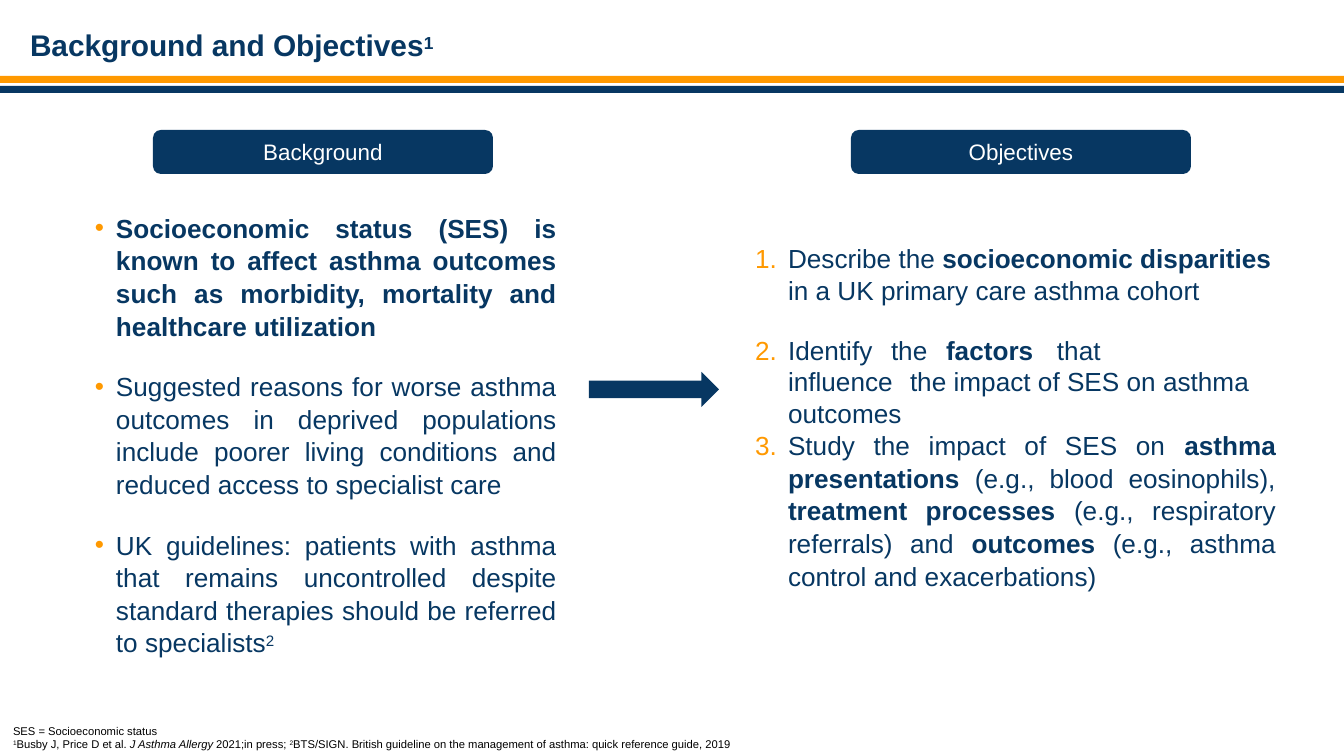
from dataclasses import dataclass

from lxml import etree
from pptx import Presentation
from pptx import util as u
from pptx.dml.color import RGBColor
from pptx.enum import shapes, text
from pptx.oxml import ns

PX = 914400 / 134.4


@dataclass(frozen=True)
class Theme:
    font: str = "Arial"
    navy: RGBColor = RGBColor(0x07, 0x37, 0x62)
    orange: RGBColor = RGBColor(0xFF, 0x99, 0x00)
    white: RGBColor = RGBColor(0xFF, 0xFF, 0xFF)
    black: RGBColor = RGBColor(0, 0, 0)
    title: int = 16
    body: int = 14
    label: int = 12
    footnote: int = 6


theme = Theme()


def place(shape, left, top, width, height, anchor):
    shape.left, shape.top, shape.width, shape.height = (
        round(value * PX) for value in (left, top, width, height))
    frame = shape.text_frame
    frame.margin_left = frame.margin_top = frame.margin_right = frame.margin_bottom = 0
    frame.word_wrap = True
    frame.auto_size = text.MSO_AUTO_SIZE.NONE
    frame.vertical_anchor = anchor
    return frame


def write(paragraph, spans, size, color, bold=False):
    for words, style in spans:
        if style == "break":
            paragraph.add_line_break()
            continue
        run = paragraph.add_run()
        run.text = words
        run.font.name = theme.font
        run.font.size = u.Pt(size)
        run.font.color.rgb = color
        run.font.bold = bold or style == "bold"
        run.font.italic = style == "italic"
        if style == "super":
            run.font._element.set("baseline", "26000")


presentation = Presentation()
presentation.slide_width = round(1344 * PX)
presentation.slide_height = round(756 * PX)
slide = presentation.slides.add_slide(presentation.slide_layouts[3])
for placeholder in list(slide.placeholders):
    if placeholder.placeholder_format.idx > 2:
        placeholder._element.getparent().remove(placeholder._element)

frame = place(slide.shapes.title, 30, 22, 1050, 46, text.MSO_ANCHOR.MIDDLE)
frame.paragraphs[0].alignment = text.PP_ALIGN.LEFT
write(frame.paragraphs[0], [("Background and Objectives", ""), ("1", "super")],
      theme.title, theme.navy, bold=True)

PRESET = shapes.MSO_SHAPE
blocks = [
    (PRESET.RECTANGLE, 0, 76, 1344, 7, theme.orange, ""),
    (PRESET.RECTANGLE, 0, 86, 1344, 7, theme.navy, ""),
    (PRESET.ROUNDED_RECTANGLE, 153, 130, 340, 44, theme.navy, "Background"),
    (PRESET.ROUNDED_RECTANGLE, 851, 130, 340, 44, theme.navy, "Objectives"),
    (PRESET.RIGHT_ARROW, 589, 372, 130, 35, theme.navy, ""),
]
for preset, left, top, width, height, color, label in blocks:
    shape = slide.shapes.add_shape(preset, 0, 0, 0, 0)
    frame = place(shape, left, top, width, height, text.MSO_ANCHOR.MIDDLE)
    shape.shadow.inherit = False
    shape.fill.solid()
    shape.fill.fore_color.rgb = color
    shape.line.fill.background()
    if preset == PRESET.ROUNDED_RECTANGLE:
        shape.adjustments[0] = 0.18
    if label:
        frame.paragraphs[0].alignment = text.PP_ALIGN.CENTER
        write(frame.paragraphs[0], [(label, "")], theme.label, theme.white)

LEFT, JUSTIFY = text.PP_ALIGN.LEFT, text.PP_ALIGN.JUSTIFY
background = [
    (JUSTIFY, 1.04, [], [
        ("Socioeconomic status (SES) is known to affect asthma outcomes such as "
         "morbidity, mortality and healthcare utilization", "bold")]),
    (JUSTIFY, 1.04, [], [
        ("Suggested reasons for worse asthma outcomes in deprived populations include "
         "poorer living conditions and reduced access to specialist care", "")]),
    (JUSTIFY, 1.04, [], [
        ("UK guidelines: patients with asthma that remains uncontrolled despite "
         "standard therapies should be referred to specialists", ""), ("2", "super")]),
]
objectives = [
    (LEFT, 1.04, [], [
        ("Describe the ", ""), ("socioeconomic disparities", "bold"),
        (" in a UK primary care asthma cohort", "")]),
    (LEFT, 1, [136, 155, 191, 302], [
        ("Identify\tthe\t", ""), ("factors", "bold"), ("\tthat", ""), ("", "break"),
        ("influence\tthe impact of SES on asthma outcomes", "")]),
    (JUSTIFY, 1.04, [], [
        ("Study the impact of SES on ", ""), ("asthma presentations", "bold"),
        (" (e.g., blood eosinophils), ", ""), ("treatment processes", "bold"),
        (" (e.g., respiratory referrals) and ", ""), ("outcomes", "bold"),
        (" (e.g., asthma control and exacerbations)", "")]),
]
lists = [
    (1, (95, 211, 462, 440), 21, ("a:buChar", "char", "•"), background, (0, 15, 15)),
    (2, (755, 241, 521, 350), 33, ("a:buAutoNum", "type", "arabicPeriod"), objectives, (0, 15, 0)),
]
for index, bounds, indent, (tag, key, value), items, gaps in lists:
    frame = place(slide.placeholders[index], *bounds, text.MSO_ANCHOR.TOP)
    for number, ((alignment, spacing, stops, spans), gap) in enumerate(zip(items, gaps)):
        paragraph = frame.add_paragraph() if number else frame.paragraphs[0]
        paragraph.alignment = alignment
        paragraph.line_spacing = spacing
        paragraph.space_before = u.Pt(gap)
        properties = paragraph._p.get_or_add_pPr()
        properties.set("marL", str(round(indent * PX)))
        properties.set("indent", str(round(-indent * PX)))
        bullet_color = etree.SubElement(properties, ns.qn("a:buClr"))
        etree.SubElement(bullet_color, ns.qn("a:srgbClr")).set("val", str(theme.orange))
        etree.SubElement(properties, ns.qn("a:buFont")).set("typeface", theme.font)
        etree.SubElement(properties, ns.qn(tag)).set(key, value)
        if stops:
            tabs = etree.SubElement(properties, ns.qn("a:tabLst"))
            for stop in stops:
                tab = etree.SubElement(tabs, ns.qn("a:tab"))
                tab.set("pos", str(round(stop * PX)))
                tab.set("algn", "l")
        paragraph.font.size = u.Pt(theme.body)
        write(paragraph, spans, theme.body, theme.navy)

footnotes = [
    [("SES = Socioeconomic status", "")],
    [("1", "super"), ("Busby J, Price D et al. ", ""), ("J Asthma Allergy ", "italic"),
     ("2021;in press; ", ""), ("2", "super"),
     ("BTS/SIGN. British guideline on the management of asthma: "
      "quick reference guide, 2019", "")],
]
footer = slide.shapes.add_textbox(0, 0, 0, 0)
frame = place(footer, 13, 724, 740, 28, text.MSO_ANCHOR.TOP)
for number, spans in enumerate(footnotes):
    paragraph = frame.add_paragraph() if number else frame.paragraphs[0]
    write(paragraph, spans, theme.footnote, theme.black)

presentation.save("out.pptx")
